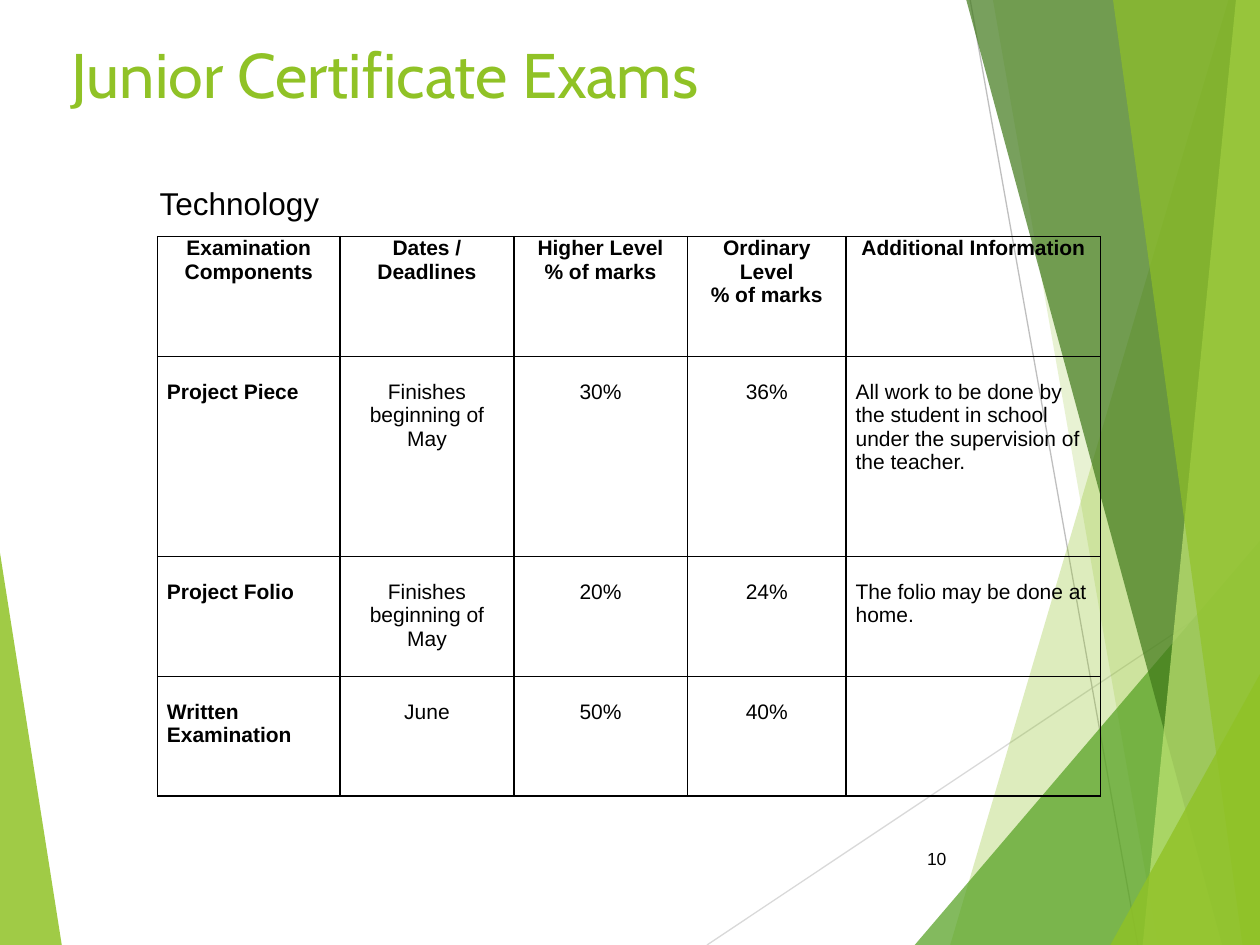
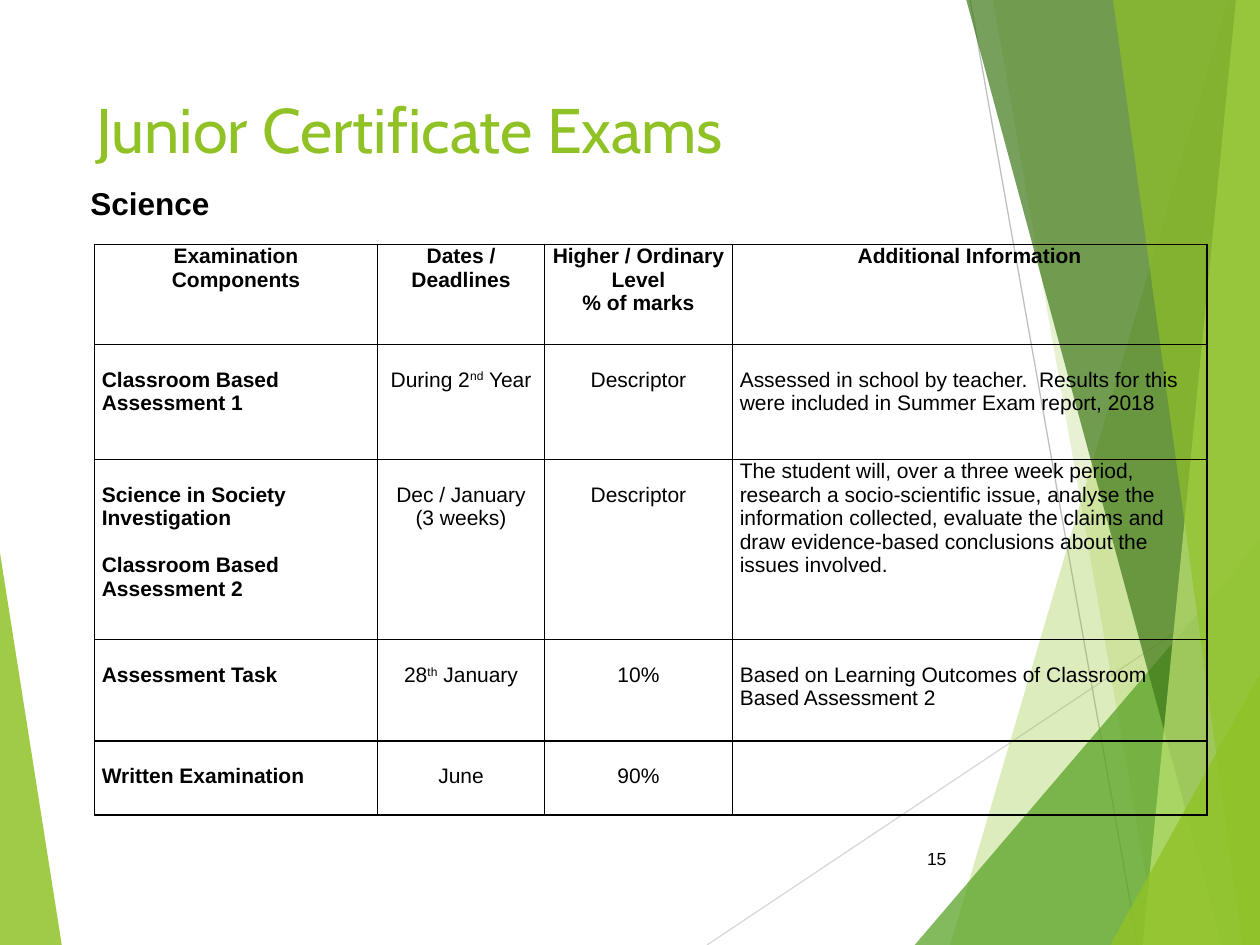
from dataclasses import dataclass

import lxml.etree
import pptx
import pptx.dml.color
import pptx.enum.shapes
import pptx.enum.text
import pptx.oxml.ns
import pptx.util

Pt = pptx.util.Pt
ALIGN = pptx.enum.text.PP_ALIGN
ANCHOR = pptx.enum.text.MSO_ANCHOR


@dataclass(frozen=True)
class Theme:
    lime: str = "90C226"
    green: str = "54A021"
    forest: str = "3F7819"
    pale: str = "C0E474"
    silver: str = "BFBFBF"
    mist: str = "D9D9D9"
    ink: str = "000000"
    title_font: str = "Cabin"
    body_font: str = "Arial"
    title_size: int = 36
    subject_size: int = 18
    table_size: int = 12
    number_size: int = 10
    line_gap: float = 13.5
    border: float = 1
    ray: float = 0.75


THEME = Theme()
WIDTH, HEIGHT = 720, 540

LEFT_WEDGE = (THEME.lime, 85, [(0, 316), (35.3, HEIGHT), (0, HEIGHT)])
RAYS = [
    (THEME.mist, (404, HEIGHT), (WIDTH, 329.2)),
    (THEME.silver, (554.4, 0), (650.2, HEIGHT)),
]
RIGHT_BANDS = [
    (THEME.lime, 30, 702, 543),
    (THEME.lime, 20, 567.4, 661.7),
    (THEME.green, 72, None, 522.7),
    (THEME.forest, 70, 552.2, 698.4),
    (THEME.pale, 70, 706.3, 653),
    (THEME.lime, 65, 636, 710),
    (THEME.lime, 80, None, 634.5),
]
SIDE_STARTS = {522.7: 309, 634.5: 385.2}


def color(value):
    return pptx.dml.color.RGBColor.from_string(value)


def add_child(parent, tag, **attributes):
    child = lxml.etree.SubElement(parent, pptx.oxml.ns.qn(tag))
    for name, value in attributes.items():
        child.set(name, str(value))
    return child


def write_text(frame, text, size=THEME.table_size, font=THEME.body_font,
               ink=THEME.ink, bold=False, align=ALIGN.LEFT, gap=0):
    for index, line in enumerate(text.split("\n")):
        paragraph = frame.add_paragraph() if index else frame.paragraphs[0]
        paragraph.alignment = align
        paragraph.space_before = Pt(gap if index else 0)
        for part, piece in enumerate(line.split("^")):
            run = paragraph.add_run()
            run.text = piece
            run.font.size = Pt(size)
            run.font.name = font
            run.font.bold = bold
            run.font.color.rgb = color(ink)
            if part % 2:
                run.font._element.set("baseline", "30000")


def add_text(slide, box, text, wrap=True, anchor=ANCHOR.TOP, **text_format):
    shape = slide.shapes.add_textbox(*map(Pt, box))
    shape.text_frame.word_wrap = wrap
    shape.text_frame.vertical_anchor = anchor
    write_text(shape.text_frame, text, **text_format)


def add_polygon(slide, fill, opacity, points):
    corners = [(Pt(x), Pt(y)) for x, y in points]
    builder = slide.shapes.build_freeform(*corners[0])
    builder.add_line_segments(corners[1:], close=True)
    shape = builder.convert_to_shape()
    shape.shadow.inherit = False
    shape.line.fill.background()
    shape.fill.solid()
    shape.fill.fore_color.rgb = color(fill)
    solid = shape._element.spPr.find(".//" + pptx.oxml.ns.qn("a:srgbClr"))
    add_child(solid, "a:alpha", val=opacity * 1000)


def add_ray(slide, ink, start, end):
    connector = slide.shapes.add_connector(
        pptx.enum.shapes.MSO_CONNECTOR.STRAIGHT, *map(Pt, start + end))
    connector.line.color.rgb = color(ink)
    connector.line.width = Pt(THEME.ray)
    add_child(connector._element.spPr, "a:effectLst")


def add_backdrop(slide):
    add_polygon(slide, *LEFT_WEDGE)
    for ray in RAYS:
        add_ray(slide, *ray)
    for fill, opacity, top, bottom in RIGHT_BANDS:
        if top is None:
            upper_edge = [(WIDTH, SIDE_STARTS[bottom])]
        else:
            upper_edge = [(WIDTH, 0), (top, 0)]
        add_polygon(slide, fill, opacity,
                    [(bottom, HEIGHT), (WIDTH, HEIGHT)] + upper_edge)


def style_cell(cell, inset, top):
    cell.margin_left = cell.margin_right = Pt(inset)
    cell.margin_top, cell.margin_bottom = Pt(top), 0
    cell.vertical_anchor = ANCHOR.TOP
    properties = cell._tc.get_or_add_tcPr()
    for side in "LRTB":
        line = add_child(properties, f"a:ln{side}", w=Pt(THEME.border))
        add_child(add_child(line, "a:solidFill"), "a:srgbClr", val=THEME.ink)
    cell.fill.background()


def add_exam_table(slide, left, top, columns, heights, rows, inset,
                   has_header=True, flush=()):
    frame = slide.shapes.add_table(
        len(rows), len(columns),
        *map(Pt, (left, top, sum(columns), sum(heights))))
    table = frame.table
    table.first_row = table.horz_banding = False
    for column, width in zip(table.columns, columns):
        column.width = Pt(width)
    for row, height in zip(table.rows, heights):
        row.height = Pt(height)
    for y, texts in enumerate(rows):
        header = has_header and y == 0
        for x, text in enumerate(texts):
            cell = table.cell(y, x)
            lowered = not header and (y, x) not in flush
            style_cell(cell, inset, THEME.line_gap if lowered else 0)
            component = x == 0 and not header
            side_column = not header and x in (0, len(columns) - 1)
            write_text(cell.text_frame, text, bold=header or component,
                       align=ALIGN.LEFT if side_column else ALIGN.CENTER,
                       gap=THEME.line_gap if component else 0)


def add_exam_slide(presentation, title_box, number):
    slide = presentation.slides.add_slide(presentation.slide_layouts[6])
    add_backdrop(slide)
    add_text(slide, title_box, "Junior Certificate Exams",
             size=THEME.title_size, font=THEME.title_font, ink=THEME.lime)
    add_text(slide, (507.6, 476, 40.3, 28.8), number, anchor=ANCHOR.MIDDLE,
             size=THEME.number_size, align=ALIGN.RIGHT)
    return slide


def build_technology(presentation):
    slide = add_exam_slide(presentation, (33.8, 16.6, 648, 90), "10")
    add_exam_table(
        slide, 90, 135.2, [104.4, 99.2, 99.2, 90.8, 145.4],
        [68.5, 114.3, 68.5, 68.5],
        [
            ["Examination\nComponents", "Dates /\nDeadlines",
             "Higher Level\n% of marks", "Ordinary Level\n% of marks",
             "Additional Information"],
            ["Project Piece", "Finishes beginning of May", "30%", "36%",
             "All work to be done by the student in school under the "
             "supervision of the teacher."],
            ["Project Folio", "Finishes beginning of May", "20%", "24%",
             "The folio may be done at home."],
            ["Written Examination", "June", "50%", "40%", ""],
        ], inset=5.4)
    add_text(slide, (84.2, 101.5, 106.6, 28.8), "Technology", wrap=False,
             size=THEME.subject_size)


def build_science(presentation):
    slide = add_exam_slide(presentation, (48, 48, 500, 104), "15")
    left, top, inset = 54, 139.7, 4.2
    columns = [161.8, 95.4, 107.4, 271.2]
    heights = [57.1, 65.8, 103, 57.7]
    add_exam_table(
        slide, left, top, columns, heights,
        [
            ["Examination\nComponents", "Dates /\nDeadlines",
             "Higher / Ordinary Level\n% of marks", "Additional Information"],
            ["Classroom Based Assessment 1", "During 2^nd^ Year", "Descriptor",
             "Assessed in school by teacher.  Results for this were included "
             "in Summer Exam report, 2018"],
            ["Science in Society Investigation\nClassroom Based Assessment 2",
             "Dec / January\n(3 weeks)", "Descriptor",
             "The student will, over a three week period, research a "
             "socio-scientific issue, analyse the information collected, "
             "evaluate the claims and draw evidence-based conclusions about "
             "the issues involved."],
            ["Assessment Task", "28^th^ January", "10%",
             "Based on Learning Outcomes of Classroom Based Assessment 2"],
        ], inset, flush={(2, 3)})
    add_text(slide, (44.6, 101.5, 83.5, 28.8), "Science", wrap=False,
             size=THEME.subject_size, bold=True)
    add_exam_table(slide, left, top + sum(heights), columns, [42.4],
                   [["Written Examination", "June", "90%", ""]],
                   inset, has_header=False)


def main():
    presentation = pptx.Presentation()
    presentation.slide_width = Pt(WIDTH)
    presentation.slide_height = Pt(HEIGHT)
    build_technology(presentation)
    build_science(presentation)
    presentation.save("out.pptx")


if __name__ == "__main__":
    main()
